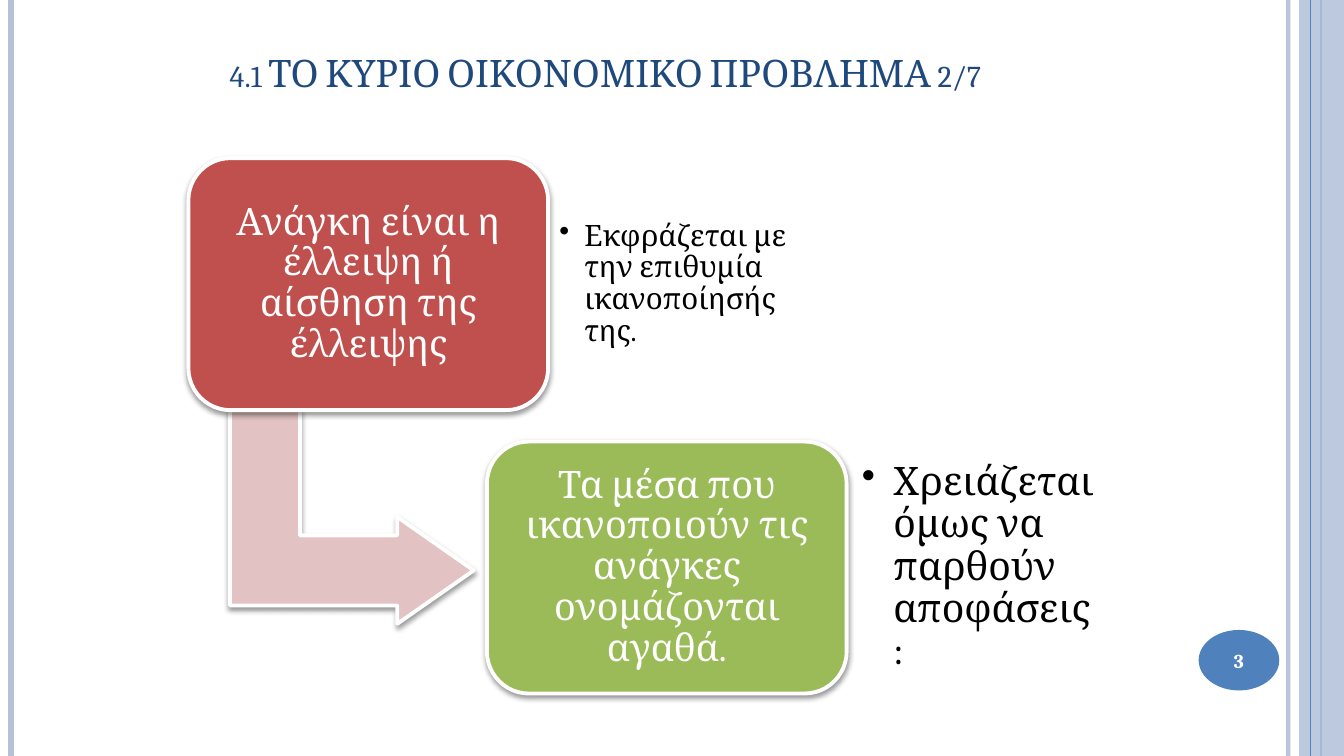
from lxml import etree
from pptx import Presentation
from pptx.dml.color import RGBColor
from pptx.enum.shapes import MSO_CONNECTOR, MSO_SHAPE
from pptx.enum.text import MSO_ANCHOR, PP_ALIGN
from pptx.oxml import parse_xml
from pptx.oxml.ns import nsdecls, qn
from pptx.util import Pt

COLORS = {
    "pale": "B3C1DB", "blue": "4F81BD", "title": "1F497D", "red": "C0504D",
    "green": "9BBB59", "arrow": "E2C2C2", "white": "FFFFFF", "black": "000000",
}
FONT = "Cambria"
WIDTH, HEIGHT = 960, 540
BOX_WIDTH, BOX_HEIGHT = 257, 180
NOTE_WIDTH, NOTE_HEIGHT = 187.2, 145.4

# x, colour, weight, opacity in percent
RULES_BEHIND = [(920.2, "pale", 3, 93), (7.9, "pale", 4.5, 100), (943.9, "blue", 1.5, 100)]
RULE_FRONT = (936, "blue", 0.75, 100)

# left, top, colour, box text, note text, note size, note inset, note indent
STEPS = [
    (134.6, 113, "red", "Ανάγκη είναι η έλλειψη ή αίσθηση της έλλειψης",
     "Εκφράζεται με την επιθυμία ικανοποίησής της.", 21, 7.9, 18),
    (347.8, 315.4, "green", "Τα μέσα που ικανοποιούν τις ανάγκες ονομάζονται αγαθά.",
     "Χρειάζεται όμως να παρθούν αποφάσεις:", 28, 10.8, 22.5),
]


def color(name):
    return RGBColor.from_string(COLORS[name])


def set_opacity(element, percent):
    """Make the solid colour inside element partly transparent."""
    rgb = next(element.iter(qn("a:srgbClr")))
    etree.SubElement(rgb, qn("a:alpha")).set("val", str(percent * 1000))


def add_rule(slide, x, color_name, weight, opacity):
    rule = slide.shapes.add_connector(MSO_CONNECTOR.STRAIGHT, Pt(x), Pt(0), Pt(x), Pt(HEIGHT))
    rule.line.color.rgb = color(color_name)
    rule.line.width = Pt(weight)
    properties = rule.line._get_or_add_ln()
    if opacity < 100:
        set_opacity(properties, opacity)
    etree.SubElement(properties.getparent(), qn("a:effectLst"))


def add_filled(slide, kind, left, top, width, height, color_name):
    shape = slide.shapes.add_shape(kind, Pt(left), Pt(top), Pt(width), Pt(height))
    shape.shadow.inherit = False
    shape.fill.solid()
    shape.fill.fore_color.rgb = color(color_name)
    shape.line.fill.background()
    return shape


def add_raised(slide, kind, left, top, width, height, color_name, adjustments):
    """Add a filled shape with a white outline and a soft shadow below it."""
    shape = add_filled(slide, kind, left, top, width, height, color_name)
    for index, value in enumerate(adjustments):
        shape.adjustments[index] = value
    shape.line.color.rgb = color("white")
    shape.line.width = Pt(2.75)
    effects = next(shape._element.iter(qn("a:effectLst")))
    effects.append(parse_xml(
        f'<a:outerShdw {nsdecls("a")} blurRad="{Pt(4)}" dist="{Pt(2)}" dir="5400000" '
        'rotWithShape="0"><a:srgbClr val="000000"><a:alpha val="40000"/></a:srgbClr>'
        '</a:outerShdw>'))
    return shape


def write(shape, text, size, color_name, inset, align=PP_ALIGN.CENTER,
          anchor=MSO_ANCHOR.MIDDLE, spacing=None, bold=None, bullet_indent=None):
    frame = shape.text_frame
    frame.word_wrap = True
    frame.vertical_anchor = anchor
    frame.margin_left = frame.margin_right = Pt(inset)
    frame.margin_top = frame.margin_bottom = Pt(min(inset, 3.6) if spacing is None else inset)
    paragraph = frame.paragraphs[0]
    paragraph.alignment = align
    paragraph.line_spacing = spacing
    if bullet_indent:
        properties = paragraph._p.get_or_add_pPr()
        properties.set("marL", str(Pt(bullet_indent)))
        properties.set("indent", str(-Pt(bullet_indent)))
        etree.SubElement(properties, qn("a:buChar")).set("char", "•")
    run = paragraph.add_run()
    run.text = text
    run.font.name = FONT
    run.font.size = Pt(size)
    run.font.bold = bold
    run.font.color.rgb = color(color_name)
    return run


def add_text(slide, left, top, width, height, *content, **options):
    box = slide.shapes.add_textbox(Pt(left), Pt(top), Pt(width), Pt(height))
    return write(box, *content, **options)


def add_step(slide, left, top, color_name, text, note, note_size, note_inset, note_indent):
    box = add_raised(slide, MSO_SHAPE.ROUNDED_RECTANGLE, left, top, BOX_WIDTH, BOX_HEIGHT,
                     color_name, [0.167])
    write(box, text, 27, "white", 7.9, spacing=0.9)
    add_text(slide, left + BOX_WIDTH, top + (BOX_HEIGHT - NOTE_HEIGHT) / 2,
             NOTE_WIDTH, NOTE_HEIGHT, note, note_size, "black", note_inset,
             align=PP_ALIGN.LEFT, spacing=0.9, bullet_indent=note_indent)


def add_frame(slide):
    for rule in RULES_BEHIND:
        add_rule(slide, *rule)
    band = add_filled(slide, MSO_SHAPE.RECTANGLE, 928, 0, 32, HEIGHT, "pale")
    set_opacity(band._element.spPr, 87)
    add_rule(slide, *RULE_FRONT)
    badge = add_filled(slide, MSO_SHAPE.OVAL, 856.2, 450, 57.6, 43.2, "blue")
    write(badge, "3", 14, "white", 0, bold=True)


def main():
    presentation = Presentation()
    presentation.slide_width, presentation.slide_height = Pt(WIDTH), Pt(HEIGHT)
    slide = presentation.slides.add_slide(presentation.slide_layouts[6])
    add_frame(slide)
    arrow = add_raised(slide, MSO_SHAPE.BENT_UP_ARROW, 175, 282.2, 152.6, 174.2,
                       "arrow", [0.328, 0.25, 0.358])
    arrow.rotation = 90
    for step in STEPS:
        add_step(slide, *step)
    title = add_text(slide, 157, 0, 657.4, 71.3, "4.1 ΤΟ ΚΥΡΙΟ ΟΙΚΟΝΟΜΙΚΟ ΠΡΟΒΛΗΜΑ 2/7",
                     27, "title", 7.2, align=PP_ALIGN.LEFT, anchor=MSO_ANCHOR.BOTTOM)
    title._r.get_or_add_rPr().set("cap", "small")
    presentation.save("out.pptx")


if __name__ == "__main__":
    main()
